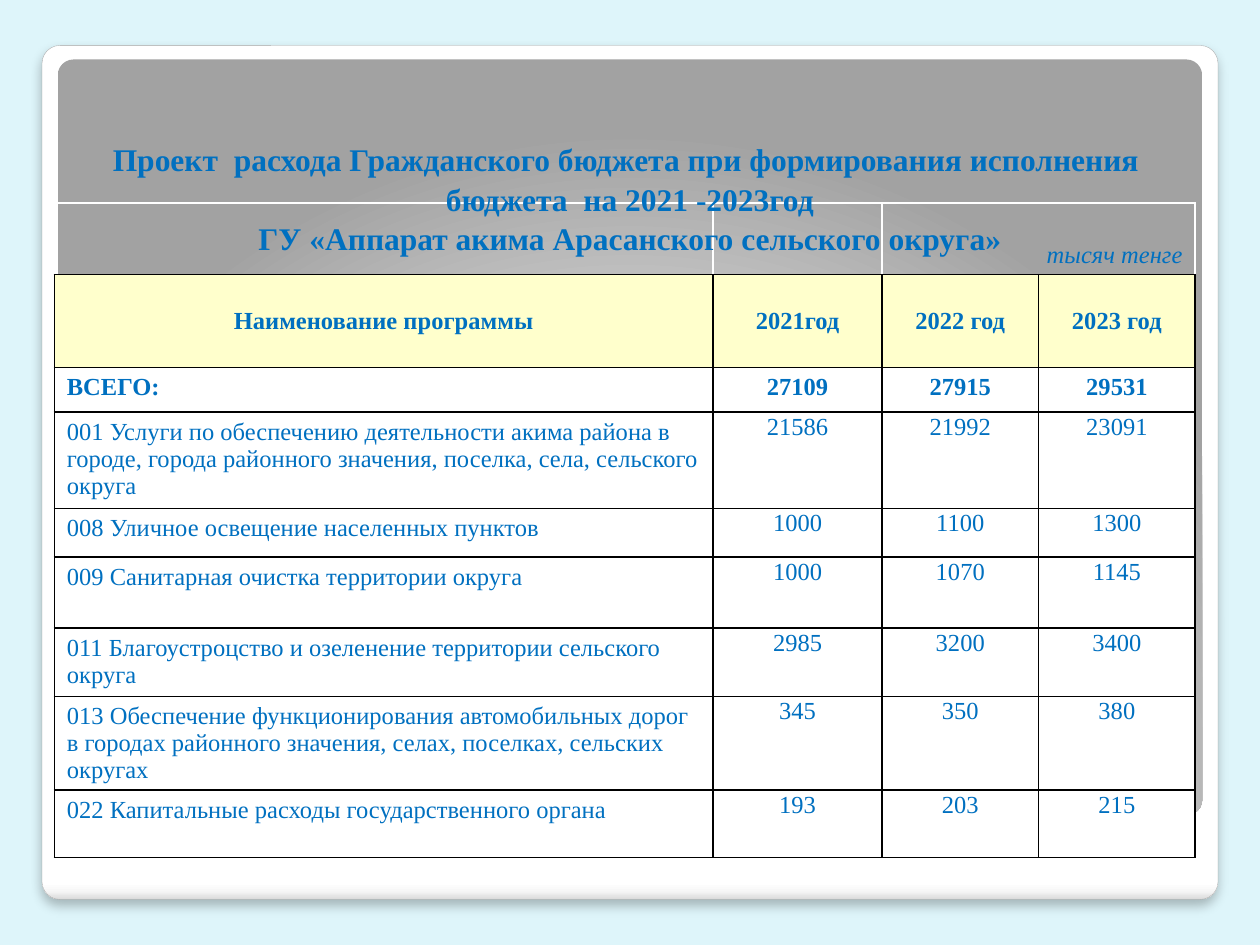
from lxml import etree
from pptx import Presentation
from pptx.dml.color import RGBColor
from pptx.enum import shapes, text
from pptx.oxml import ns, parse_xml
from pptx.util import Pt

FONT = "Times New Roman"
COLORS = {"background": "DEF5FA", "text": "0070C0", "header": "FFFFCC",
          "cell": "FFFFFF", "border": "000000", "card_line": "A4A4A4"}
CARD_STOPS = [(0, "FFFFFF"), (98, "FFFFFF"), (99, "F7F7F7"), (100, "DADADA")]
PANEL_STOPS = [(0, "FFFFFF"), (55, "E1E1E1"), (100, "A2A2A2")]
LINEAR = '<a:lin ang="5400000" scaled="0"/>'
RADIAL = ('<a:path path="circle"><a:fillToRect l="50000" t="175000" '
          'r="50000" b="-75000"/></a:path>')
SHADOW = ('<a:effectLst {}><a:outerShdw blurRad="76200" dist="50800" dir="5400000" '
          'rotWithShape="0"><a:srgbClr val="000000"><a:alpha val="25000"/>'
          '</a:srgbClr></a:outerShdw></a:effectLst>').format(ns.nsdecls("a"))

TITLE = ("Проект  расхода Гражданского бюджета при формирования исполнения \v"
         "бюджета  на 2021 -2023год\v"
         "ГУ «Аппарат акима Арасанского сельского округа»")
UNIT = "тысяч тенге"
HEADER = ("Наименование программы", "2021год", "2022 год", "2023 год")
TOTAL = ("ВСЕГО:", 27109, 27915, 29531)
PROGRAMS = [
    ("001 Услуги по обеспечению деятельности акима района в городе, "
     "города районного значения, поселка, села, сельского округа", 21586, 21992, 23091),
    ("008 Уличное освещение населенных пунктов", 1000, 1100, 1300),
    ("009 Санитарная очистка территории округа", 1000, 1070, 1145),
    ("011 Благоустроцство и озеленение территории сельского округа", 2985, 3200, 3400),
    ("013 Обеспечение функционирования автомобильных дорог в городах "
     "районного значения, селах, поселках, сельских округах", 345, 350, 380),
    ("022 Капитальные расходы государственного органа", 193, 203, 215),
]
COLUMNS = (376.5, 96.5, 89.5, 89.5)
ROWS = (41, 53, 25.5, 55, 28, 40.5, 39, 53.5, 38.5)


def rgb(name):
    return RGBColor.from_string(COLORS[name])


def write(tf, content, size=14, bold=False, italic=False,
          align=text.PP_ALIGN.LEFT, spacing=None):
    tf.text = str(content)
    p = tf.paragraphs[0]
    p.alignment = align
    p.line_spacing = spacing
    for r in p.runs:
        r.font.name, r.font.size = FONT, Pt(size)
        r.font.bold, r.font.italic = bold, italic
        r.font.color.rgb = rgb("text")


def add_panel(s, box, stops, direction):
    """Add a rounded panel with a gradient along the given direction."""
    sp = s.shapes.add_shape(shapes.MSO_SHAPE.ROUNDED_RECTANGLE, *map(Pt, box))
    sp.adjustments[0] = 0.021
    sp.shadow.inherit = False
    sp.line.fill.background()
    stop_xml = "".join(f'<a:gs pos="{pos * 1000}"><a:srgbClr val="{color}"/></a:gs>'
                       for pos, color in stops)
    gradient = parse_xml(f'<a:gradFill {ns.nsdecls("a")} rotWithShape="1">'
                         f'<a:gsLst>{stop_xml}</a:gsLst>{direction}</a:gradFill>')
    sp.element.spPr.find(ns.qn("a:prstGeom")).addnext(gradient)
    return sp


def add_card(s, box):
    left, top, width, height = box
    card = add_panel(s, box, CARD_STOPS, LINEAR)
    card.line.color.rgb = rgb("card_line")
    card.line.width = Pt(0.16)
    sp_pr = card.element.spPr
    sp_pr.replace(sp_pr.find(ns.qn("a:effectLst")), parse_xml(SHADOW))
    add_panel(s, (left + 9, top + 8, width - 18, height - 56), PANEL_STOPS, RADIAL)


def set_borders(cell, sides):
    tc_pr = cell._tc.get_or_add_tcPr()
    for i, side in enumerate(sides):
        ln = etree.Element(ns.qn(f"a:ln{side}"), w=str(Pt(1)))
        fill = etree.SubElement(ln, ns.qn("a:solidFill"))
        etree.SubElement(fill, ns.qn("a:srgbClr"), val=COLORS["border"])
        tc_pr.insert(i, ln)


def fill_row(table, i, values, color="cell", bold=False, center_label=False,
             anchor=text.MSO_ANCHOR.TOP, tight=False):
    for j, value in enumerate(values):
        cell = table.cell(i, j)
        cell.fill.solid()
        cell.fill.fore_color.rgb = rgb(color)
        cell.vertical_anchor = anchor
        if tight and j:
            cell.margin_left = cell.margin_top = cell.margin_right = Pt(0.7)
            cell.margin_bottom = 0
        centered = j > 0 or center_label
        write(cell.text_frame, value, bold=bold,
              align=text.PP_ALIGN.CENTER if centered else text.PP_ALIGN.LEFT)
        set_borders(cell, "LRTB")


def add_budget_table(s, left, top):
    frame = s.shapes.add_table(len(ROWS), len(COLUMNS), Pt(left), Pt(top),
                               Pt(sum(COLUMNS)), Pt(sum(ROWS)))
    table = frame.table
    table.first_row = table.horz_banding = False
    for column, width in zip(table.columns, COLUMNS):
        column.width = Pt(width)
    for row, height in zip(table.rows, ROWS):
        row.height = Pt(height)

    for cell in table.rows[0].cells:
        cell.fill.background()
        set_borders(cell, "B")
    unit = table.cell(0, 2)
    unit.merge(table.cell(0, 3))
    unit.vertical_anchor = text.MSO_ANCHOR.BOTTOM
    write(unit.text_frame, UNIT, italic=True, align=text.PP_ALIGN.RIGHT)

    fill_row(table, 1, HEADER, color="header", bold=True, center_label=True,
             anchor=text.MSO_ANCHOR.MIDDLE)
    fill_row(table, 2, TOTAL, bold=True)
    for i, program in enumerate(PROGRAMS, start=3):
        fill_row(table, i, program, tight=True)


def place_title(s, box):
    """Format the title and bring it in front of the panels and table."""
    title = s.shapes.title
    title.left, title.top, title.width, title.height = map(Pt, box)
    tf = title.text_frame
    tf.word_wrap = True
    tf.auto_size = text.MSO_AUTO_SIZE.NONE
    tf.vertical_anchor = text.MSO_ANCHOR.BOTTOM
    write(tf, TITLE, size=18, bold=True, align=text.PP_ALIGN.CENTER, spacing=1.05)
    title.element.getparent().append(title.element)


def main():
    prs = Presentation()
    prs.slide_width, prs.slide_height = Pt(720), Pt(540)
    s = prs.slides.add_slide(prs.slide_layouts[5])
    s.background.fill.solid()
    s.background.fill.fore_color.rgb = rgb("background")
    add_card(s, (24, 26, 672, 488))
    add_budget_table(s, 31, 116)
    place_title(s, (34, 37.5, 652, 113))
    prs.save("out.pptx")


if __name__ == "__main__":
    main()
